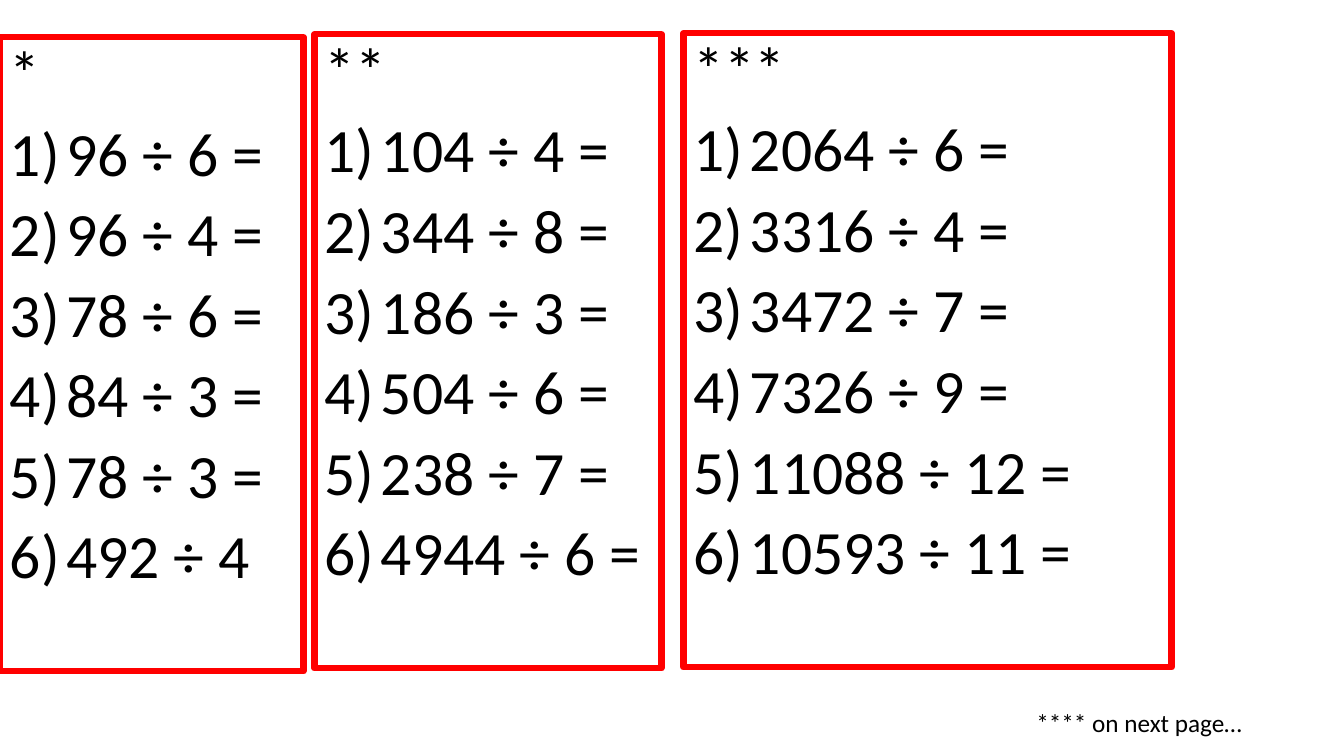
"""Build a slide of division exercises in three levels of difficulty."""
from lxml import etree
from pptx import Presentation
from pptx import util as u
from pptx.dml.color import RGBColor
from pptx.enum import shapes, text
from pptx.oxml.ns import qn

LEVELS = [
    ("*", (0, 0.37, 3.01),
     ["96 ÷ 6 =", "96 ÷ 4 =", "78 ÷ 6 =", "84 ÷ 3 =", "78 ÷ 3 =", "492 ÷ 4"]),
    ("**", (3.12, 0.34, 3.44),
     ["104 ÷ 4 =", "344 ÷ 8 =", "186 ÷ 3 =", "504 ÷ 6 =", "238 ÷ 7 =", "4944 ÷ 6 ="]),
    ("***", (6.78, 0.33, 4.84),
     ["2064 ÷ 6 =", "3316 ÷ 4 =", "3472 ÷ 7 =", "7326 ÷ 9 =", "11088 ÷ 12 =", "10593 ÷ 11 ="]),
]
FOOTER = "**** on next page…"
BOX_HEIGHT = 6.29
INDENT = 0.56


def color(hex_value):
    return RGBColor.from_string(hex_value)


def write(p, content, size):
    p.text = content
    p.alignment = text.PP_ALIGN.LEFT
    p.font.size = u.Pt(size)
    p.font.name = "Calibri"
    p.font.color.rgb = color("000000")


def number(p):
    pPr = p._p.get_or_add_pPr()
    pPr.set("marL", str(u.Inches(INDENT)))
    pPr.set("indent", str(-u.Inches(INDENT)))
    bullet = etree.Element(qn("a:buAutoNum"), type="arabicParenR")
    pPr.insert_element_before(bullet, "a:tabLst", "a:defRPr", "a:extLst")


def add_level(s, stars, place, sums):
    left, top, width = map(u.Inches, place)
    sp = s.shapes.add_shape(shapes.MSO_SHAPE.RECTANGLE, left, top, width, u.Inches(BOX_HEIGHT))
    sp.shadow.inherit = False
    sp.fill.background()
    sp.line.color.rgb = color("FF0000")
    sp.line.width = u.Pt(4.5)
    tf = sp.text_frame
    tf.word_wrap = True
    tf.vertical_anchor = text.MSO_ANCHOR.TOP
    for i, line in enumerate([stars] + sums):
        p = tf.add_paragraph() if i else tf.paragraphs[0]
        write(p, line, 44)
        p.line_spacing = 0.9
        p.space_before = u.Pt(10)
        if i:
            number(p)


def main():
    prs = Presentation()
    prs.slide_width, prs.slide_height = u.Inches(13.33), u.Inches(7.5)
    s = prs.slides.add_slide(prs.slide_layouts[6])
    for level in LEVELS:
        add_level(s, *level)
    tf = s.shapes.add_textbox(*map(u.Inches, (10.18, 6.97, 3.01, 0.4))).text_frame
    tf.word_wrap = True
    tf.auto_size = text.MSO_AUTO_SIZE.SHAPE_TO_FIT_TEXT
    write(tf.paragraphs[0], FOOTER, 18)
    prs.save("out.pptx")


if __name__ == "__main__":
    main()
